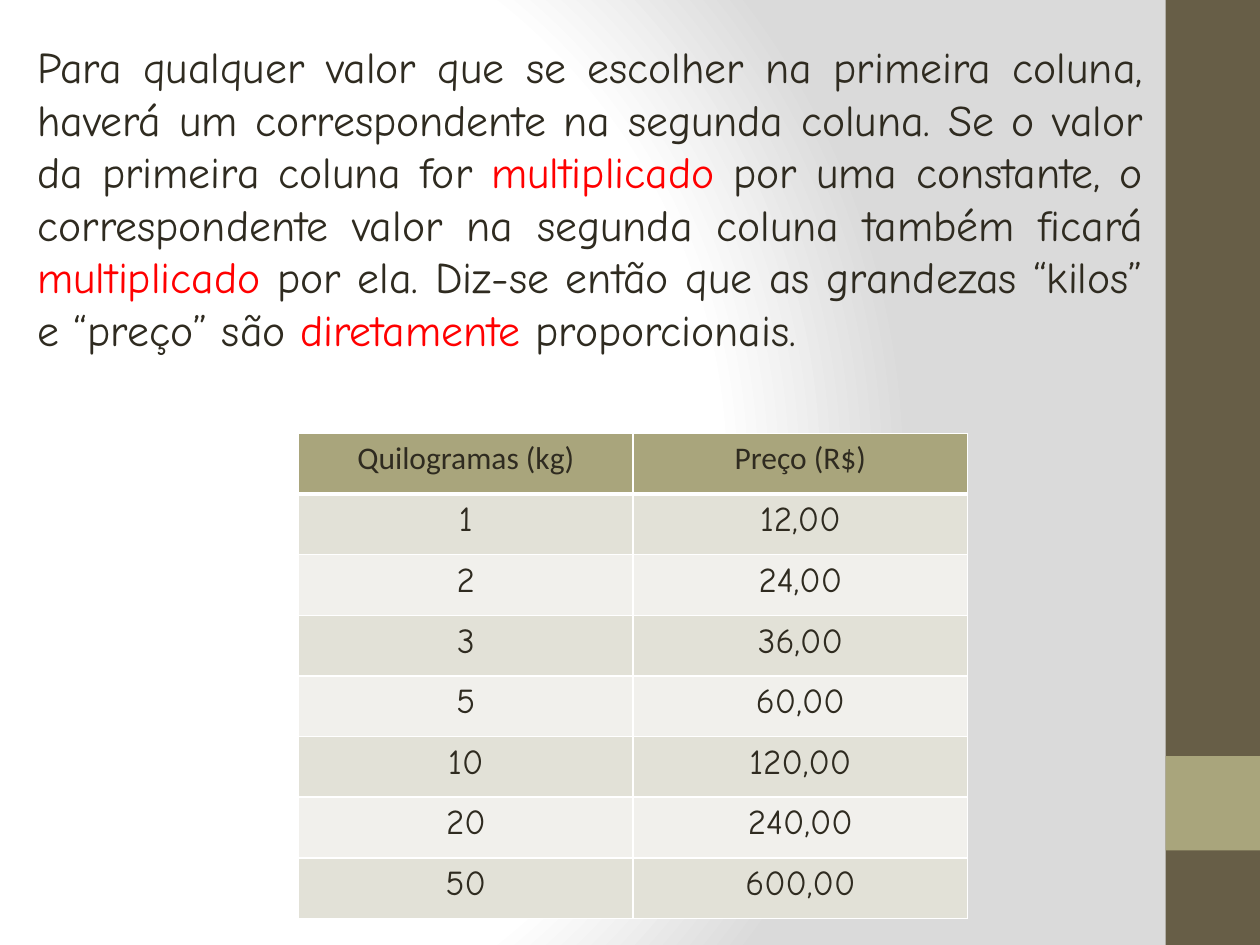
from dataclasses import dataclass

from lxml.etree import SubElement
from pptx import Presentation
from pptx.dml.color import RGBColor
from pptx.enum.shapes import MSO_SHAPE
from pptx.enum.text import MSO_AUTO_SIZE, PP_ALIGN
from pptx.oxml import parse_xml
from pptx.oxml.ns import nsdecls, qn
from pptx.util import Inches, Pt


@dataclass(frozen=True)
class Theme:
    ink: str = "2F2B20"
    accent: str = "FF0000"
    brown: str = "675E47"
    olive: str = "A9A57C"
    bands: tuple = ("E2E1D7", "F1F0EC")
    white: str = "FFFFFF"
    gray: str = "DADADA"
    hand: str = "Comic Neue"
    sans: str = "Calibri"
    body: int = 25
    head: int = 18
    cell: int = 20


THEME = Theme()

# Each piece is its wording and whether it is stressed.
PIECES = [
    ("Para qualquer valor que se escolher na primeira coluna, haverá um "
     "correspondente na segunda coluna. Se o valor da primeira coluna for ", False),
    ("multiplicado", True),
    (" por uma constante, o correspondente valor na segunda coluna também ficará ", False),
    ("multiplicado ", True),
    ("por ela. Diz-se então que as grandezas “kilos” e “preço” são ", False),
    ("diretamente", True),
    (" proporcionais.", False),
]
HEADS = ("Quilogramas (kg)", "Preço (R$)")
KILOS = (1, 2, 3, 5, 10, 20, 50)
PRICE = 12


def style(run, font, size, color):
    run.font.name = font
    run.font.size = Pt(size)
    run.font.bold = False
    run.font.color.rgb = RGBColor.from_string(color)


def paint_back(slide):
    """Fill the background with a round gradient centred on the right side."""
    slide.background.fill.gradient()
    old = slide.element.find(".//" + qn("a:gradFill"))
    stops = "".join(
        f'<a:gs pos="{pos * 1000}"><a:srgbClr val="{color}"/></a:gs>'
        for pos, color in ((0, THEME.white), (75, THEME.white), (100, THEME.gray))
    )
    new = parse_xml(
        f'<a:gradFill {nsdecls("a")} rotWithShape="1"><a:gsLst>{stops}</a:gsLst>'
        '<a:path path="circle">'
        '<a:fillToRect l="20000" t="50000" r="100000" b="50000"/>'
        '</a:path></a:gradFill>'
    )
    old.getparent().replace(old, new)


def add_bar(slide, top, height, color):
    bar = slide.shapes.add_shape(
        MSO_SHAPE.RECTANGLE, Inches(9.25), Inches(top), Inches(0.75), Inches(height))
    bar.shadow.inherit = False
    bar.fill.solid()
    bar.fill.fore_color.rgb = RGBColor.from_string(color)
    bar.line.fill.background()


def add_body(slide):
    box = slide.shapes.add_textbox(
        Inches(0.2), Inches(0.27), Inches(8.97), Inches(3.05))
    frame = box.text_frame
    frame.word_wrap = True
    frame.auto_size = MSO_AUTO_SIZE.SHAPE_TO_FIT_TEXT
    para = frame.paragraphs[0]
    para.alignment = PP_ALIGN.JUSTIFY
    for text, stress in PIECES:
        run = para.add_run()
        run.text = text
        style(run, THEME.hand, THEME.body, THEME.accent if stress else THEME.ink)


def add_edges(cell, base):
    """Draw white cell borders; base is the width of the bottom one in points."""
    props = cell._tc.get_or_add_tcPr()
    for side, width in (("L", 1), ("R", 1), ("T", 1), ("B", base)):
        line = SubElement(props, qn(f"a:ln{side}"), w=str(Pt(width)))
        fill = SubElement(line, qn("a:solidFill"))
        SubElement(fill, qn("a:srgbClr"), val=THEME.white)


def fill_cell(cell, text, head, color):
    add_edges(cell, 3 if head else 1)
    cell.fill.solid()
    cell.fill.fore_color.rgb = RGBColor.from_string(color)
    cell.margin_left = cell.margin_right = Inches(0.07)
    cell.margin_top = cell.margin_bottom = Inches(0.05)
    para = cell.text_frame.paragraphs[0]
    para.text = text
    para.alignment = PP_ALIGN.CENTER
    font, size = (THEME.sans, THEME.head) if head else (THEME.hand, THEME.cell)
    style(para.runs[0], font, size, THEME.ink)


def add_prices(slide):
    rows = [HEADS] + [(str(kilo), f"{kilo * PRICE},00") for kilo in KILOS]
    table = slide.shapes.add_table(
        len(rows), len(HEADS),
        Inches(2.37), Inches(3.44), Inches(5.31), Inches(3.85)).table
    table.first_row = table.horz_banding = False
    for row, texts in enumerate(rows):
        color = THEME.bands[(row - 1) % 2] if row else THEME.olive
        for col, text in enumerate(texts):
            fill_cell(table.cell(row, col), text, row == 0, color)


def main():
    deck = Presentation()
    deck.slide_width, deck.slide_height = Inches(10), Inches(7.5)
    slide = deck.slides.add_slide(deck.slide_layouts[6])
    paint_back(slide)
    add_bar(slide, 0, 7.5, THEME.brown)
    add_bar(slide, 6, 0.75, THEME.olive)
    add_body(slide)
    add_prices(slide)
    deck.save("out.pptx")


if __name__ == "__main__":
    main()
